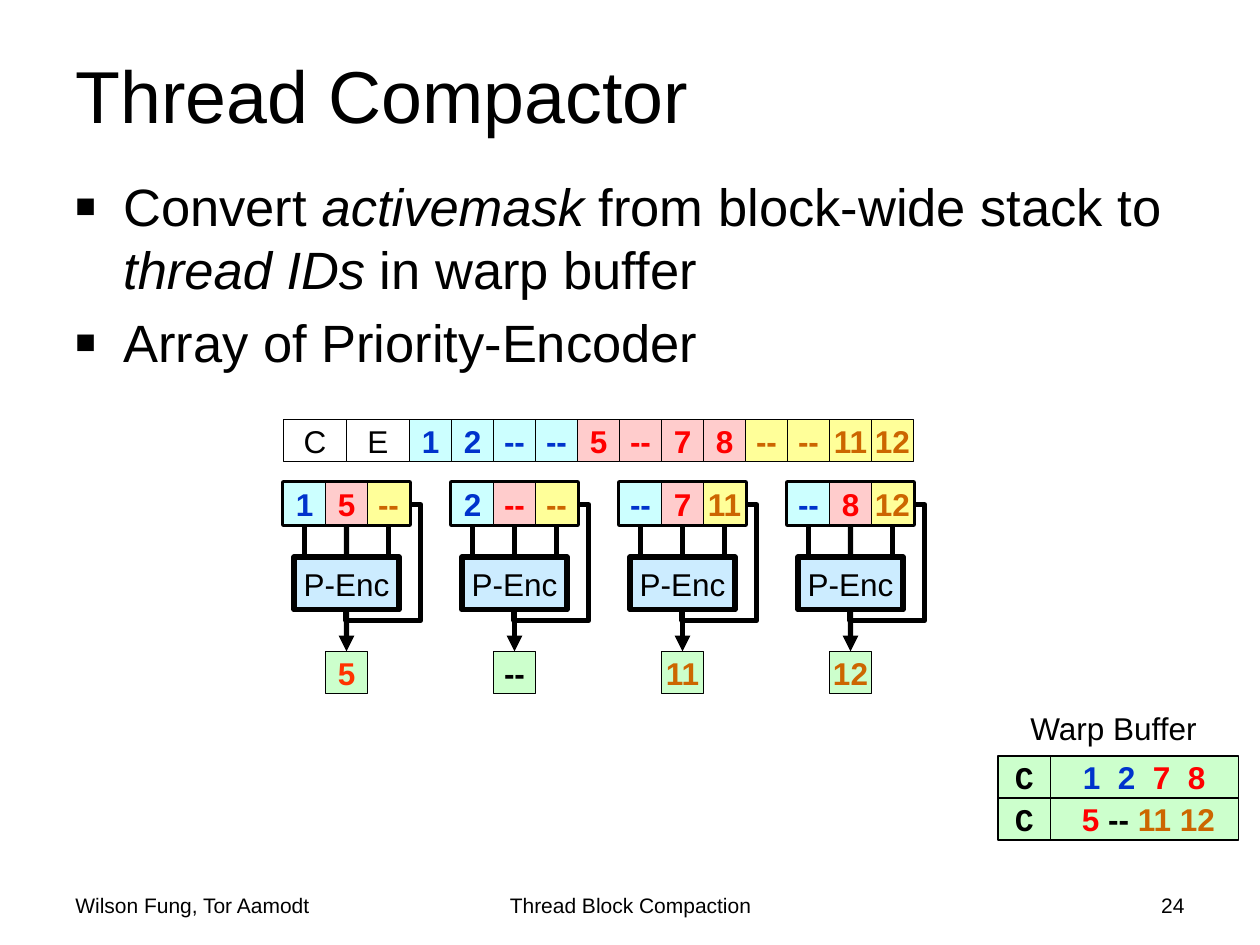
from lxml import etree
from pptx import Presentation
from pptx.dml.color import RGBColor
from pptx.enum.shapes import MSO_CONNECTOR, MSO_SHAPE
from pptx.enum.text import MSO_ANCHOR, PP_ALIGN
from pptx.oxml.ns import qn
from pptx.util import Inches, Pt

RECTANGLE = MSO_SHAPE.RECTANGLE
STRAIGHT, ELBOW = MSO_CONNECTOR.STRAIGHT, MSO_CONNECTOR.ELBOW
LEFT, CENTER, RIGHT = PP_ALIGN.LEFT, PP_ALIGN.CENTER, PP_ALIGN.RIGHT
TOP, MIDDLE, BOTTOM = MSO_ANCHOR.TOP, MSO_ANCHOR.MIDDLE, MSO_ANCHOR.BOTTOM

COLORS = {
    "black": "000000", "white": "FFFFFF",
    "blue": "0033CC", "red": "FF0000", "orange": "CC6600", "vermilion": "FF3300",
    "light blue": "CCFFFF", "light red": "FFCCCC", "light yellow": "FFFF99",
    "light green": "CCFFCC", "encoder": "CCECFF",
}
WARPS = [  # fill, text colour, thread in each lane
    ("light blue", "blue", ["1", "2", "--", "--"]),
    ("light red", "red", ["5", "--", "7", "8"]),
    ("light yellow", "orange", ["--", "--", "11", "12"]),
]
OUTPUTS = [("5", "vermilion"), ("--", "black"), ("11", "orange"), ("12", "orange")]
CELL = 1 / 3
GRID_LEFT = 2.25
LANE_PITCH = 4 * CELL
MASK_TOP, LANE_TOP, ENCODER_TOP, OUTPUT_TOP = 3.33, 3.83, 4.42, 5.17

presentation = Presentation()
presentation.slide_width = Inches(10)
presentation.slide_height = Inches(7.5)
slide = presentation.slides.add_slide(presentation.slide_layouts[6])
shapes = slide.shapes


def write_runs(paragraph, runs, size, align=LEFT, font="Arial", bold=False):
    """Fill a paragraph with (text, colour, italic) runs."""
    paragraph.alignment = align
    for text, color, italic in runs:
        run = paragraph.add_run()
        run.text = text
        run.font.name = font
        run.font.size = Pt(size)
        run.font.bold = bold
        run.font.italic = italic
        run.font.color.rgb = RGBColor.from_string(COLORS[color])


def add_box(left, top, width, height, fill, runs=(), line=0.75, bold=True, font="Arial"):
    """Add an outlined rectangle with centred (text, colour) runs."""
    box = shapes.add_shape(RECTANGLE, Inches(left), Inches(top), Inches(width), Inches(height))
    box.shadow.inherit = False
    if fill:
        box.fill.solid()
        box.fill.fore_color.rgb = RGBColor.from_string(COLORS[fill])
    else:
        box.fill.background()
    box.line.color.rgb = RGBColor.from_string(COLORS["black"])
    box.line.width = Pt(line)
    box.text_frame.word_wrap = False
    box.text_frame.vertical_anchor = MIDDLE
    write_runs(box.text_frame.paragraphs[0], [(*run, False) for run in runs],
               18, CENTER, font, bold)
    return box


# Title, footer and label
for text, size, left, top, width, height, align, anchor in [
    ("Wilson Fung, Tor Aamodt", 12, 0.5, 6.83, 2.33, 0.5, LEFT, BOTTOM),
    ("Thread Block Compaction", 12, 3.42, 6.83, 3.17, 0.5, CENTER, BOTTOM),
    ("24", 12, 7.17, 6.83, 2.33, 0.5, RIGHT, BOTTOM),
    ("Thread Compactor", 42, 0.5, 0.35, 9, 1.2, LEFT, TOP),
    ("Warp Buffer", 18, 8.08, 5.58, 1.53, 0.4, LEFT, TOP),
]:
    text_box = shapes.add_textbox(Inches(left), Inches(top), Inches(width), Inches(height))
    text_box.text_frame.word_wrap = text != "Warp Buffer"
    text_box.text_frame.vertical_anchor = anchor
    write_runs(text_box.text_frame.paragraphs[0], [(text, "black", False)], size, align)

# Bullets
body = shapes.add_textbox(Inches(0.5), Inches(1.33), Inches(9), Inches(1.83)).text_frame
body.word_wrap = True
bullets = [
    [("Convert ", "black", False), ("activemask ", "black", True),
     ("from block-wide stack to ", "black", False), ("thread IDs", "black", True),
     (" in warp buffer", "black", False)],
    [("Array of Priority-Encoder", "black", False)],
]
for index, runs in enumerate(bullets):
    paragraph = body.add_paragraph() if index else body.paragraphs[0]
    write_runs(paragraph, runs, 30)
    paragraph.space_before = Pt(6)
    properties = paragraph._p.get_or_add_pPr()
    properties.set("marL", str(Inches(0.38)))
    properties.set("indent", str(-Inches(0.38)))
    etree.SubElement(properties, qn("a:buSzPct")).set("val", "65000")
    etree.SubElement(properties, qn("a:buFont")).set("typeface", "Arial")
    etree.SubElement(properties, qn("a:buChar")).set("char", "■")

# One priority encoder per lane
for lane, (output, color) in enumerate(OUTPUTS):
    left = GRID_LEFT + lane * LANE_PITCH
    middle = left + 1.5 * CELL
    encoder = add_box(left + CELL / 4, ENCODER_TOP, 2.5 * CELL, 0.42, "encoder",
                      [("P-Enc", "black")], 3, bold=False)
    frame = add_box(left, LANE_TOP, 3 * CELL, CELL, None, line=3)
    output_box = add_box(left + CELL, OUTPUT_TOP, CELL, CELL, "light green", [(output, color)])

    inputs = [
        shapes.add_connector(STRAIGHT, Inches(x), Inches(LANE_TOP + CELL),
                             Inches(x), Inches(ENCODER_TOP))
        for x in (middle - CELL, middle, middle + CELL)
    ]
    inputs[1].begin_connect(frame, 2)
    inputs[1].end_connect(encoder, 0)
    arrow = shapes.add_connector(STRAIGHT, 0, 0, 0, 0)
    arrow.begin_connect(encoder, 2)
    arrow.end_connect(output_box, 0)

    # Bypass from the encoder's output round to the right side of the lane
    bypass = shapes.add_connector(ELBOW, Inches(middle - 0.17), Inches(4.17),
                                  Inches(middle + 0.68), Inches(4.69))
    transform = bypass._element.spPr.find(qn("a:xfrm"))
    for name, value in (("rot", "5400000"), ("flipH", "1"), ("flipV", "1")):
        transform.set(name, value)
    geometry = bypass._element.spPr.find(qn("a:prstGeom"))
    geometry.set("prst", "bentConnector4")
    adjustments = geometry.get_or_add_avLst()
    for name, value in (("adj1", -8300), ("adj2", 114000)):
        guide = etree.SubElement(adjustments, qn("a:gd"))
        guide.set("name", name)
        guide.set("fmla", f"val {value}")

    for connector in [*inputs, arrow, bypass]:
        connector.line.color.rgb = RGBColor.from_string(COLORS["black"])
        connector.line.width = Pt(3)
        etree.SubElement(connector._element.spPr, qn("a:effectLst"))
    etree.SubElement(arrow.line._get_or_add_ln(), qn("a:tailEnd")).set("type", "triangle")

# Active mask row, and the same threads regrouped by lane
for index, text in enumerate("CE"):
    add_box(GRID_LEFT + index * 0.5, MASK_TOP, 0.5, CELL, "white", [(text, "black")], bold=False)
for warp, (fill, color, threads) in enumerate(WARPS):
    for lane, thread in enumerate(threads):
        mask_left = GRID_LEFT + 1 + (warp * 4 + lane) * CELL
        lane_left = GRID_LEFT + lane * LANE_PITCH + warp * CELL
        for left, top in ((mask_left, MASK_TOP), (lane_left, LANE_TOP)):
            add_box(left, top, CELL, CELL, fill, [(thread, color)])

# Warp buffer
buffer_rows = [
    [("1  2  ", "blue"), ("7  8", "red")],
    [(" 5", "red"), (" -- ", "black"), ("11 12", "orange")],
]
for row, runs in enumerate(buffer_rows):
    top = 6 + row * CELL
    add_box(8.33, top, 1.5, CELL, "light green", runs)
    add_box(7.92, top, 0.42, CELL, "light green", [("C", "black")], font="Courier New")

presentation.save("out.pptx")
